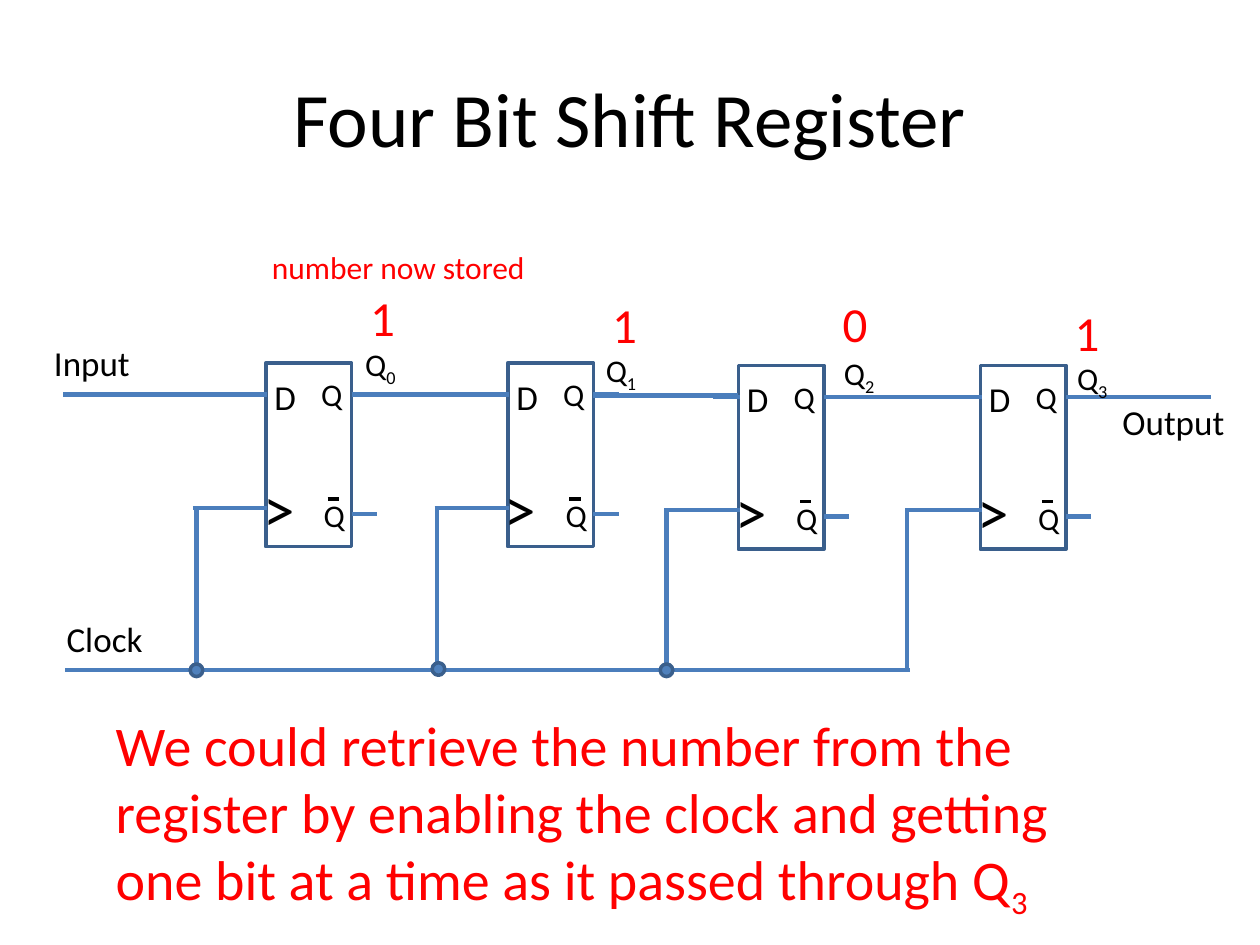
from dataclasses import dataclass

from lxml.etree import SubElement
from pptx import Presentation
from pptx.dml.color import RGBColor
from pptx.enum.shapes import MSO_CONNECTOR as Connector
from pptx.enum.shapes import MSO_SHAPE as Preset
from pptx.enum.text import MSO_ANCHOR as Anchor
from pptx.enum.text import MSO_AUTO_SIZE as AutoSize
from pptx.enum.text import PP_ALIGN as Align
from pptx.oxml.ns import qn
from pptx.util import Emu, Pt

PX = 9144
FONT = "Calibri"
BLACK, WHITE, RED = "000000", "FFFFFF", "FF0000"
WIRE, EDGE, DOT = "4B7EBC", "3A5F8C", "4F81BD"
WIRE_WIDTH, STUB_WIDTH, EDGE_WIDTH = 2.5, 0.75, 2


@dataclass(frozen=True)
class Label:
    text: str
    left: int
    top: int
    width: int
    height: int
    size: int
    color: str = BLACK
    subscript: str = ""


@dataclass(frozen=True)
class Line:
    x1: int
    y1: int
    x2: int
    y2: int
    width: float = WIRE_WIDTH
    color: str = WIRE


@dataclass(frozen=True)
class FlipFlop:
    left: int
    top: int


STAGES = [FlipFlop(211, 288), FlipFlop(403, 288), FlipFlop(586, 290), FlipFlop(778, 290)]
STAGE_WIDTH, STAGE_HEIGHT = 68, 146
STAGE_LABELS = [
    Label("D", -3, 5, 18, 44, 20),
    Label(">", -12, 80, 33, 42, 36),
    Label("Q", 34, 5, 18, 40, 18),
    Label("Q", 36, 101, 18, 40, 18),
]
STAGE_LINES = [
    Line(68, 25, 79, 25, STUB_WIDTH),
    Line(68, 120, 79, 120, STUB_WIDTH),
    Line(-11, 26, 0, 26, STUB_WIDTH),
    Line(-11, 116, 0, 116, STUB_WIDTH),
    Line(49, 108, 58, 108, EDGE_WIDTH, BLACK),
    Line(-20, 25, 1, 25),
    Line(-20, 115, 1, 115),
    Line(68, 120, 88, 120),
    Line(68, 25, 88, 25),
]
WIRES = [
    Line(347, 532, 347, 402), Line(345, 403, 403, 403),
    Line(52, 532, 722, 532),
    Line(156, 533, 156, 403), Line(153, 403, 211, 403),
    Line(529, 531, 529, 403), Line(529, 405, 587, 405),
    Line(720, 531, 720, 403), Line(720, 405, 778, 405),
    Line(50, 313, 210, 313), Line(279, 313, 404, 313),
    Line(471, 314, 586, 314), Line(657, 315, 772, 315),
    Line(846, 315, 961, 315),
]
JUNCTIONS = [(151, 527), (343, 526), (524, 527)]
JUNCTION_SIZE = 10
OUTPUT_PLACES = [(280, 269), (471, 274), (660, 276), (845, 280)]
STORED_BITS = [("1", 284, 223), ("1", 476, 229), ("0", 659, 228), ("1", 843, 235)]
LABELS = [
    Label("Clock", 43, 485, 85, 44, 20),
    Label("Input", 33, 266, 85, 44, 20),
    Label("Output", 881, 313, 109, 44, 20),
    *(Label("Q", left, top, 47, 40, 18, subscript=str(index))
      for index, (left, top) in enumerate(OUTPUT_PLACES)),
    *(Label(bit, left, top, 43, 57, 28, RED) for bit, left, top in STORED_BITS),
    Label("number now stored", 206, 192, 287, 40, 18, RED),
    Label("We could retrieve the number from the register by enabling the clock "
          "and getting one bit at a time as it passed through Q",
          82, 559, 810, 172, 32, RED, "3"),
]


def px(*values: int) -> list[Emu]:
    return [Emu(value * PX) for value in values]


def rgb(color: str) -> RGBColor:
    return RGBColor.from_string(color)


def format_para(para, size: int, color: str) -> None:
    for span in para.runs:
        span.font.name = FONT
        span.font.size = Pt(size)
        span.font.color.rgb = rgb(color)


def add_label(page, label: Label, dx: int = 0, dy: int = 0) -> None:
    box = page.shapes.add_textbox(
        *px(label.left + dx, label.top + dy, label.width, label.height))
    frame = box.text_frame
    frame.word_wrap = True
    frame.auto_size = AutoSize.SHAPE_TO_FIT_TEXT
    frame.margin_right = 0
    frame.text = label.text
    para = frame.paragraphs[0]
    if label.subscript:
        span = para.add_run()
        span.text = label.subscript
        span.font._element.set("baseline", "-25000")
    format_para(para, label.size, label.color)


def add_line(page, line: Line, dx: int = 0, dy: int = 0) -> None:
    wire = page.shapes.add_connector(
        Connector.STRAIGHT,
        *px(line.x1 + dx, line.y1 + dy, line.x2 + dx, line.y2 + dy))
    wire.line.color.rgb = rgb(line.color)
    wire.line.width = Pt(line.width)
    SubElement(wire._element.spPr, qn("a:effectLst"))


def add_outline(page, preset: Preset, left: int, top: int,
                width: int, height: int, fill: str) -> None:
    shape = page.shapes.add_shape(preset, *px(left, top, width, height))
    shape.shadow.inherit = False
    shape.fill.solid()
    shape.fill.fore_color.rgb = rgb(fill)
    shape.line.color.rgb = rgb(EDGE)
    shape.line.width = Pt(EDGE_WIDTH)


def add_flip_flop(page, stage: FlipFlop) -> None:
    add_outline(page, Preset.RECTANGLE, stage.left, stage.top,
                STAGE_WIDTH, STAGE_HEIGHT, WHITE)
    for label in STAGE_LABELS:
        add_label(page, label, stage.left, stage.top)
    for line in STAGE_LINES:
        add_line(page, line, stage.left, stage.top)


def add_title(page, text: str) -> None:
    title = page.shapes.title
    title.left, title.top, title.width, title.height = px(50, 30, 900, 125)
    frame = title.text_frame
    frame.text = text
    frame.vertical_anchor = Anchor.MIDDLE
    para = frame.paragraphs[0]
    para.alignment = Align.CENTER
    format_para(para, 44, BLACK)


def main() -> None:
    deck = Presentation()
    deck.slide_width, deck.slide_height = px(1000, 750)
    page = deck.slides.add_slide(deck.slide_layouts[5])
    add_title(page, "Four Bit Shift Register")
    for stage in STAGES:
        add_flip_flop(page, stage)
    for wire in WIRES:
        add_line(page, wire)
    for left, top in JUNCTIONS:
        add_outline(page, Preset.OVAL, left, top, JUNCTION_SIZE, JUNCTION_SIZE, DOT)
    for label in LABELS:
        add_label(page, label)
    deck.save("out.pptx")


if __name__ == "__main__":
    main()
